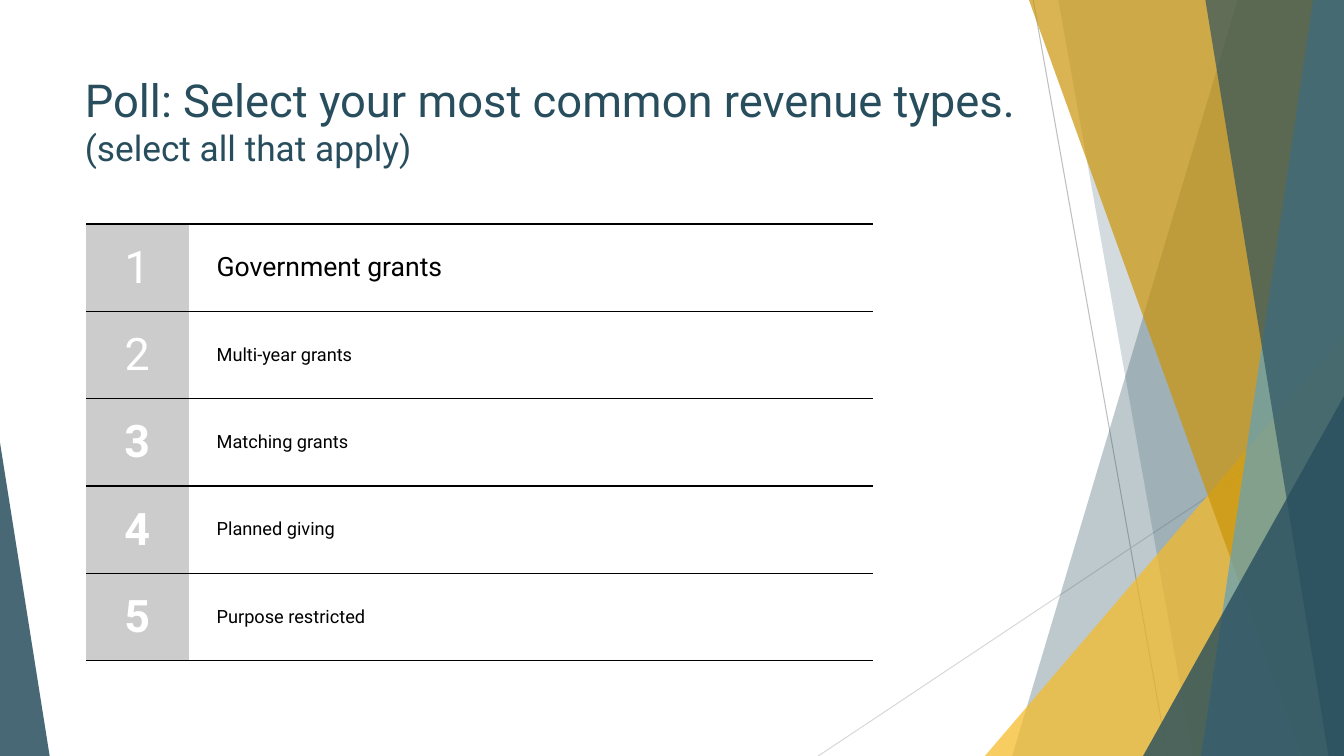
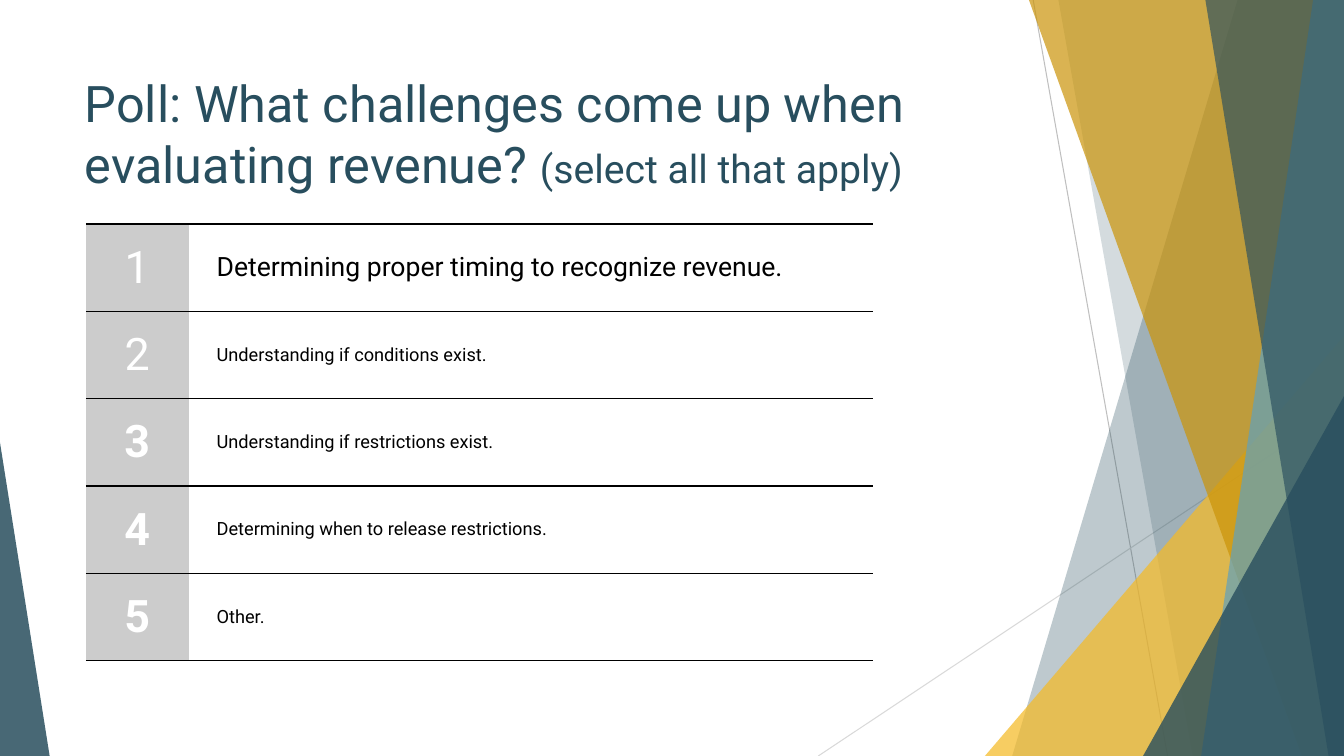
from dataclasses import dataclass

from lxml.etree import SubElement
from pptx import Presentation
from pptx.dml.color import RGBColor
from pptx.enum.shapes import MSO_CONNECTOR, MSO_SHAPE
from pptx.enum.text import MSO_ANCHOR, PP_ALIGN
from pptx.oxml import parse_xml
from pptx.oxml.ns import nsdecls, qn
from pptx.util import Pt

# Shared style
WIDTH, HEIGHT = 960, 540
FONT = "Roboto"
TEAL, GOLD, OCHRE, SKY = "284E5E", "F5BA26", "CB9409", "61A1BC"
BLACK, WHITE, GREY = "000000", "FFFFFF", "CCCCCC"
TABLE_LEFT, TABLE_TOP = 61.3, 160
COLUMN_WIDTHS = (73.5, 489)
ROW_HEIGHT = 62.4


@dataclass(frozen=True)
class Ray:
    start: tuple[float, float]
    end: tuple[float, float]
    color: str


@dataclass(frozen=True)
class Band:
    """Full-height area from a slanted left edge to the right slide edge."""
    top_x: float
    bottom_x: float
    color: str
    opacity: int


@dataclass(frozen=True)
class Wedge:
    """Triangle standing on the bottom slide edge."""
    left: float
    top: float
    width: float
    apex: float
    color: str
    opacity: int


@dataclass(frozen=True)
class Poll:
    question: str
    hint: str
    question_size: float
    hint_size: float
    hint_on_new_line: bool
    answers: tuple[str, ...]


RAYS = (
    Ray((738, 0), (834, HEIGHT), "BFBFBF"),
    Ray((WIDTH, 290), (584.5, HEIGHT), "D9D9D9"),
)
FACETS = (
    Band(884, 723, TEAL, 30),
    Band(756, 852, TEAL, 20),
    Wedge(703.5, 240, 256.5, 1, GOLD, 72),
    Band(735, 929.5, OCHRE, 70),
    Band(938, 858, SKY, 70),
    Band(861, 949, TEAL, 65),
    Wedge(816.5, 283, 143.5, 1, TEAL, 80),
    Wedge(0, 316, 35.5, 0, TEAL, 85),
)
POLLS = (
    Poll("Poll: Select your most common revenue types.", "(select all that apply)",
         32.4, 25.2, True,
         ("Government grants", "Multi-year grants", "Matching grants",
          "Planned giving", "Purpose restricted")),
    Poll("Poll: What challenges come up when evaluating revenue? ",
         "(select all that apply)", 36, 28, False,
         ("Determining proper timing to recognize revenue.",
          "Understanding if conditions exist.",
          "Understanding if restrictions exist.",
          "Determining when to release restrictions.", "Other.")),
)


def set_attributes(target, values: dict) -> None:
    for name, value in values.items():
        setattr(target, name, value)


def set_color(color_format, color: str) -> None:
    color_format.rgb = RGBColor.from_string(color)


def add_run(paragraph, text: str, size: float, color: str, bold: bool = False) -> None:
    run = paragraph.add_run()
    run.text = text
    set_attributes(run.font, {"name": FONT, "size": Pt(size), "bold": bold})
    set_color(run.font.color, color)


# Background
def draw_ray(slide, ray: Ray) -> None:
    connector = slide.shapes.add_connector(
        MSO_CONNECTOR.STRAIGHT, *map(Pt, ray.start + ray.end))
    connector.line.width = Pt(0.75)
    set_color(connector.line.color, ray.color)
    SubElement(connector._element.spPr, qn("a:effectLst"))


def draw_facet(slide, facet: Band | Wedge) -> None:
    if isinstance(facet, Band):
        builder = slide.shapes.build_freeform(facet.top_x, 0, scale=Pt(1))
        builder.add_line_segments(
            [(WIDTH, 0), (WIDTH, HEIGHT), (facet.bottom_x, HEIGHT)], close=True)
        shape = builder.convert_to_shape()
    else:
        shape = slide.shapes.add_shape(
            MSO_SHAPE.ISOSCELES_TRIANGLE, Pt(facet.left), Pt(facet.top),
            Pt(facet.width), Pt(HEIGHT - facet.top))
        shape.adjustments[0] = facet.apex
    shape.shadow.inherit = False
    shape.line.fill.background()
    shape.fill.solid()
    set_color(shape.fill.fore_color, facet.color)
    color_element = shape._element.spPr.find(qn("a:solidFill"))[0]
    SubElement(color_element, qn("a:alpha"), val=str(facet.opacity * 1000))


# Title
def draw_title(slide, poll: Poll) -> None:
    box = slide.shapes.add_textbox(Pt(53.5), Pt(48), Pt(688), Pt(104))
    set_attributes(box.text_frame, {"word_wrap": True, "vertical_anchor": MSO_ANCHOR.TOP})
    paragraph = box.text_frame.paragraphs[0]
    add_run(paragraph, poll.question, poll.question_size, TEAL)
    if poll.hint_on_new_line:
        paragraph.add_line_break()
    add_run(paragraph, poll.hint, poll.hint_size, TEAL)


# Answer table
def set_borders(cell) -> None:
    properties = cell._tc.get_or_add_tcPr()
    black = f'<a:solidFill><a:srgbClr val="{BLACK}"/></a:solidFill>'
    sides = {"lnL": "<a:noFill/>", "lnR": "<a:noFill/>", "lnT": black, "lnB": black}
    for index, (side, fill) in enumerate(sides.items()):
        properties.insert(index, parse_xml(
            f'<a:{side} {nsdecls("a")} w="{Pt(1)}">{fill}</a:{side}>'))


def fill_cell(cell, text: str, size: float, color: str, bold: bool,
              left_margin: float, alignment: PP_ALIGN) -> None:
    set_attributes(cell, {
        "margin_left": Pt(left_margin), "margin_right": Pt(10),
        "margin_top": Pt(3.6), "margin_bottom": Pt(3.6),
        "vertical_anchor": MSO_ANCHOR.MIDDLE,
    })
    paragraph = cell.text_frame.paragraphs[0]
    paragraph.alignment = alignment
    add_run(paragraph, text, size, color, bold)
    set_borders(cell)


def draw_answers(slide, answers: tuple[str, ...]) -> None:
    table = slide.shapes.add_table(
        len(answers), len(COLUMN_WIDTHS), Pt(TABLE_LEFT), Pt(TABLE_TOP),
        Pt(sum(COLUMN_WIDTHS)), Pt(ROW_HEIGHT * len(answers))).table
    set_attributes(table, {"first_row": False, "horz_banding": False})
    for column, width in zip(table.columns, COLUMN_WIDTHS):
        column.width = Pt(width)
    for index, answer in enumerate(answers):
        table.rows[index].height = Pt(ROW_HEIGHT)
        number_cell, answer_cell = table.rows[index].cells
        number_cell.fill.solid()
        set_color(number_cell.fill.fore_color, GREY)
        answer_cell.fill.background()
        fill_cell(number_cell, str(index + 1), 32, WHITE, index >= 2, 10, PP_ALIGN.CENTER)
        fill_cell(answer_cell, answer, 13 if index else 19, BLACK, False, 20, PP_ALIGN.LEFT)


def draw_poll(presentation, poll: Poll) -> None:
    slide = presentation.slides.add_slide(presentation.slide_layouts[6])
    for ray in RAYS:
        draw_ray(slide, ray)
    for facet in FACETS:
        draw_facet(slide, facet)
    draw_title(slide, poll)
    draw_answers(slide, poll.answers)


def main() -> None:
    presentation = Presentation()
    set_attributes(presentation, {"slide_width": Pt(WIDTH), "slide_height": Pt(HEIGHT)})
    for poll in POLLS:
        draw_poll(presentation, poll)
    presentation.save("out.pptx")


if __name__ == "__main__":
    main()
